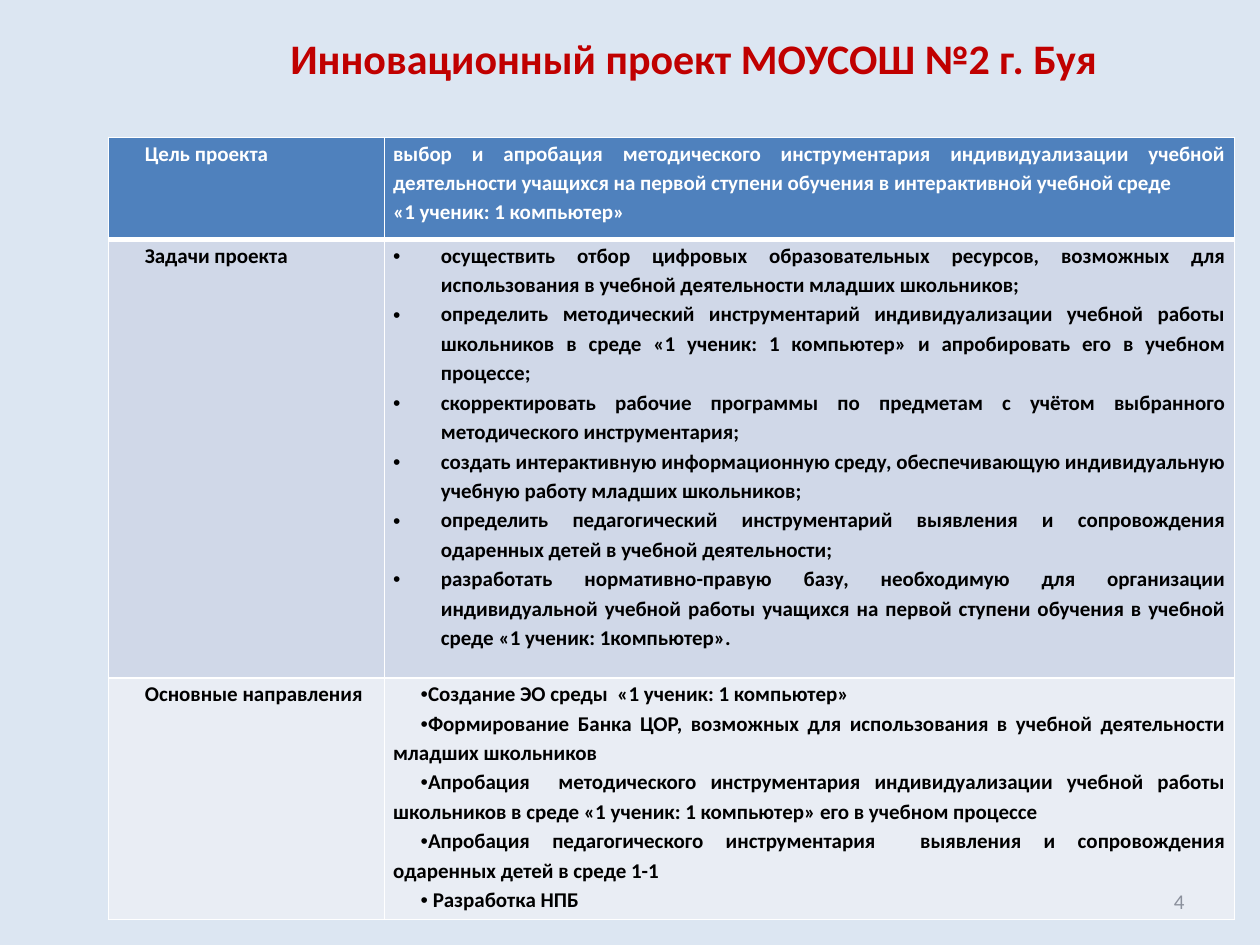
from lxml import etree
from pptx import Presentation
from pptx import util as u
from pptx.dml.color import RGBColor
from pptx.enum import text
from pptx.oxml.ns import qn

THEME = {
    "font": "Calibri", "background": "DCE6F2", "title": "C00000", "number": "8B909C",
    "border": "FFFFFF", "header_text": "FFFFFF", "body_text": "000000",
    "row_fills": ["4F81BD", "D0D8E8", "E9EDF4"],
    "title_size": 24, "text_size": 12, "line_spacing": 1.15,
    "thin": 1, "thick": 3,
}
WIDTH, HEIGHT = 10, 7.5
TABLE_LEFT, TABLE_TOP = 0.86, 1.09
COLUMNS = [2.19, 6.75]
ROWS = [0.81, 3.48, 1.92]
CELL_INSET = 0.07

# Paragraph styles: left margin, first-line indent, bullet
PLAIN = (0, 0, None)
LABEL = (0, 0.22, None)
HANGING = (0.38, -0.38, "•")
INDENTED = (0, 0.22, "•")

TITLE = "Инновационный проект МОУСОШ №2 г. Буя"
PAGE_NUMBER = "4"
SECTIONS = [
    ("Цель проекта", PLAIN, [
        "выбор и апробация методического инструментария индивидуализации учебной "
        "деятельности учащихся на первой ступени обучения в интерактивной учебной среде ",
        "«1 ученик: 1 компьютер»",
    ]),
    ("Задачи проекта", HANGING, [
        "осуществить отбор цифровых образовательных ресурсов, возможных для "
        "использования в учебной деятельности младших школьников;",
        "определить методический инструментарий индивидуализации учебной работы школьников "
        "в среде «1 ученик: 1 компьютер» и апробировать его в учебном процессе;",
        "скорректировать рабочие программы по предметам с учётом выбранного "
        "методического инструментария;",
        "создать интерактивную информационную среду, обеспечивающую индивидуальную "
        "учебную работу младших школьников;",
        "определить педагогический инструментарий выявления и сопровождения "
        "одаренных детей в учебной деятельности;",
        "разработать нормативно-правую базу, необходимую для организации индивидуальной "
        "учебной работы учащихся на первой ступени обучения в учебной среде "
        "«1 ученик: 1компьютер».",
    ]),
    ("Основные направления", INDENTED, [
        "Создание ЭО среды  «1 ученик: 1 компьютер»",
        "Формирование Банка ЦОР, возможных для использования в учебной деятельности "
        "младших школьников",
        "Апробация  методического инструментария индивидуализации учебной работы "
        "школьников в среде «1 ученик: 1 компьютер» его в учебном процессе",
        "Апробация педагогического инструментария  выявления и сопровождения "
        "одаренных детей в среде 1-1",
        " Разработка НПБ",
    ]),
]


def format_runs(paragraph, size, color, bold):
    for run in paragraph.runs:
        run.font.name = THEME["font"]
        run.font.size = u.Pt(size)
        run.font.bold = bold
        run.font.color.rgb = RGBColor.from_string(color)


def add_text(slide, content, box, size, color, bold, alignment, anchor):
    shape = slide.shapes.add_textbox(*[u.Inches(length) for length in box])
    frame = shape.text_frame
    frame.word_wrap = True
    frame.vertical_anchor = anchor
    frame.text = content
    frame.paragraphs[0].alignment = alignment
    format_runs(frame.paragraphs[0], size, color, bold)


def set_borders(cell, top, bottom):
    """Draw solid borders; top and bottom are line widths in points."""
    properties = cell._tc.get_or_add_tcPr()
    sides = {"lnL": THEME["thin"], "lnR": THEME["thin"], "lnT": top, "lnB": bottom}
    for position, (tag, width) in enumerate(sides.items()):
        line = etree.Element(qn("a:" + tag), w=str(u.Pt(width)))
        fill = etree.SubElement(line, qn("a:solidFill"))
        etree.SubElement(fill, qn("a:srgbClr"), val=THEME["border"])
        properties.insert(position, line)


def fill_cell(cell, paragraphs, style, row):
    margin, indent, bullet = style
    cell.margin_left = cell.margin_right = u.Inches(CELL_INSET)
    cell.margin_top = cell.margin_bottom = 0
    cell.fill.solid()
    cell.fill.fore_color.rgb = RGBColor.from_string(THEME["row_fills"][row])
    set_borders(cell,
                top=THEME["thick"] if row == 1 else THEME["thin"],
                bottom=THEME["thick"] if row == 0 else THEME["thin"])
    cell.text_frame.text = "\n".join(paragraphs)
    color = THEME["header_text"] if row == 0 else THEME["body_text"]
    for paragraph in cell.text_frame.paragraphs:
        paragraph.alignment = text.PP_ALIGN.JUSTIFY
        paragraph.line_spacing = THEME["line_spacing"]
        properties = paragraph._p.get_or_add_pPr()
        properties.set("marL", str(u.Inches(margin)))
        properties.set("indent", str(u.Inches(indent)))
        if bullet:
            etree.SubElement(properties, qn("a:buFont"), typeface="Arial")
            etree.SubElement(properties, qn("a:buChar"), char=bullet)
        format_runs(paragraph, THEME["text_size"], color, True)


def add_project_table(slide):
    table = slide.shapes.add_table(
        len(ROWS), len(COLUMNS), u.Inches(TABLE_LEFT), u.Inches(TABLE_TOP),
        u.Inches(sum(COLUMNS)), u.Inches(sum(ROWS))).table
    for column, width in zip(table.columns, COLUMNS):
        column.width = u.Inches(width)
    for row, height in zip(table.rows, ROWS):
        row.height = u.Inches(height)
    for row, (label, style, paragraphs) in enumerate(SECTIONS):
        fill_cell(table.cell(row, 0), [label], LABEL, row)
        fill_cell(table.cell(row, 1), paragraphs, style, row)


def main():
    presentation = Presentation()
    presentation.slide_width = u.Inches(WIDTH)
    presentation.slide_height = u.Inches(HEIGHT)
    slide = presentation.slides.add_slide(presentation.slide_layouts[6])
    slide.background.fill.solid()
    slide.background.fill.fore_color.rgb = RGBColor.from_string(THEME["background"])
    add_project_table(slide)
    add_text(slide, TITLE, (1.53, 0.21, 7.95, 0.51), THEME["title_size"], THEME["title"],
             True, text.PP_ALIGN.CENTER, text.MSO_ANCHOR.TOP)
    add_text(slide, PAGE_NUMBER, (7.17, 6.95, 2.33, 0.4), THEME["text_size"],
             THEME["number"], False, text.PP_ALIGN.RIGHT, text.MSO_ANCHOR.MIDDLE)
    presentation.save("out.pptx")


if __name__ == "__main__":
    main()
